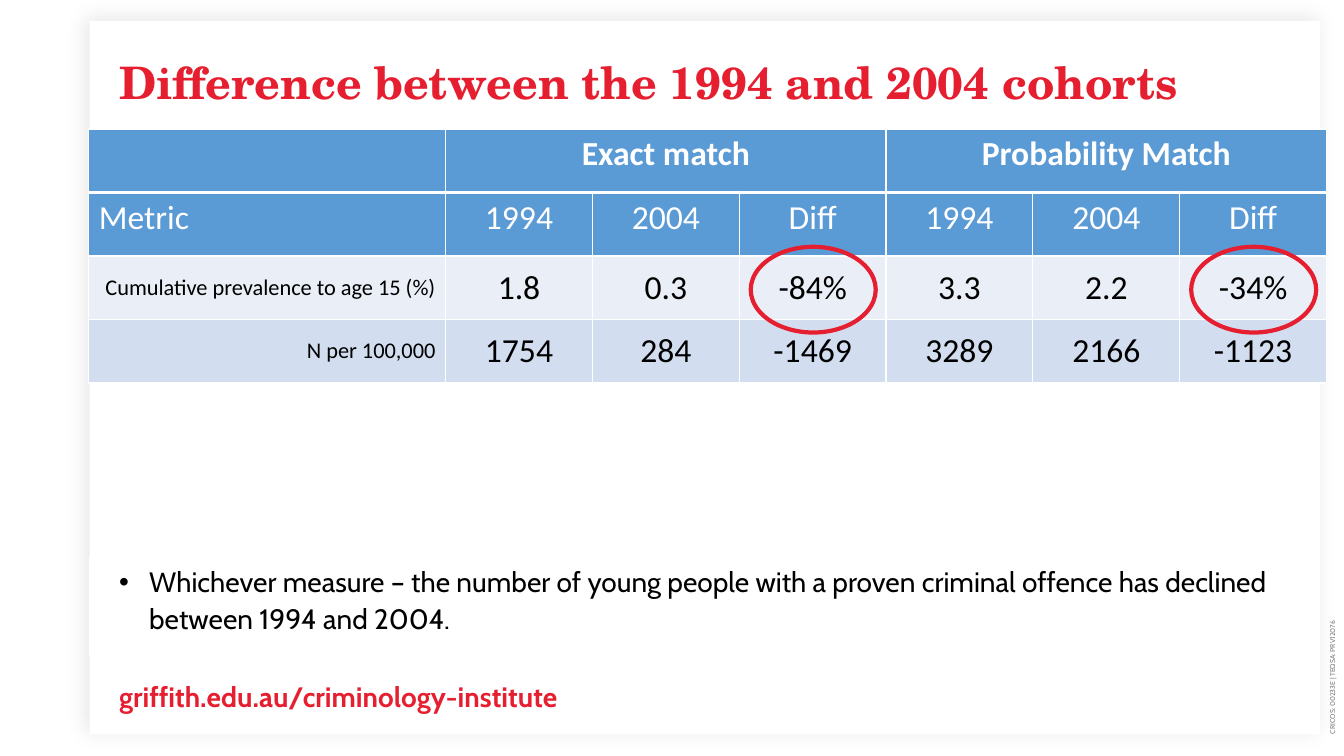
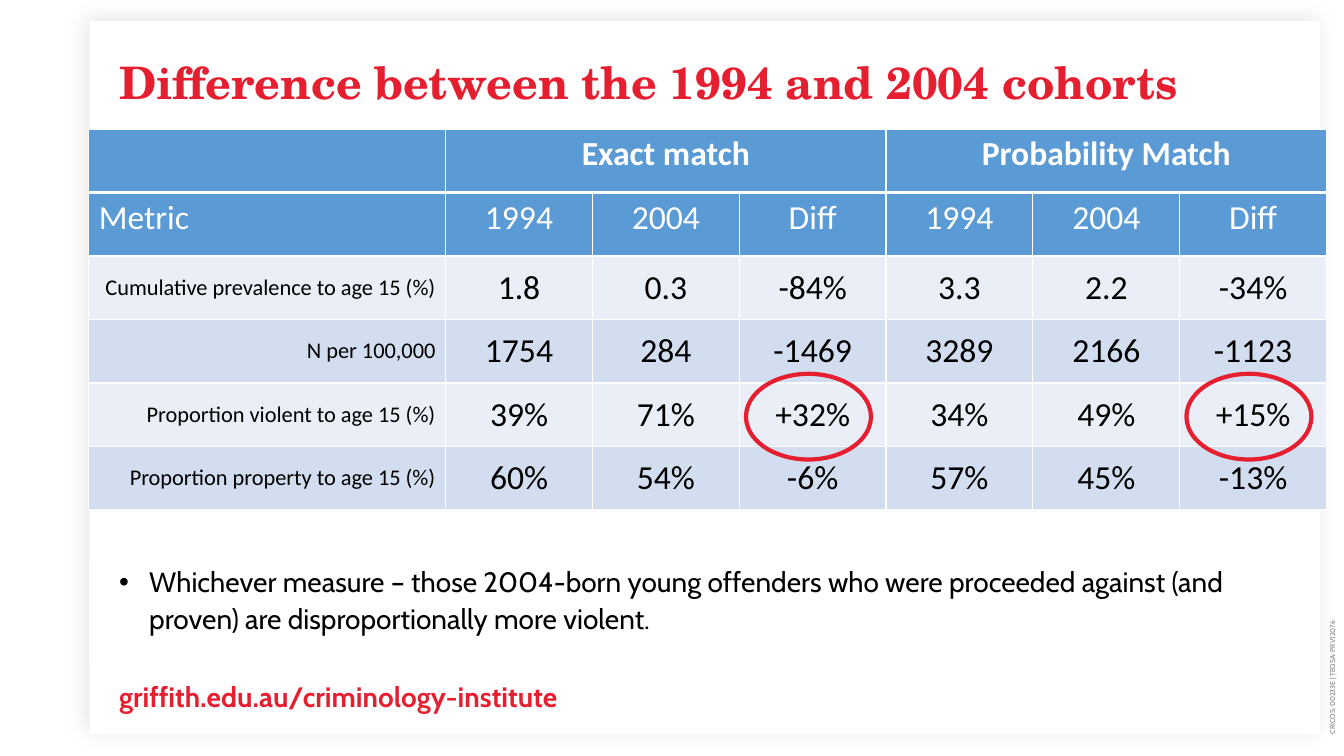
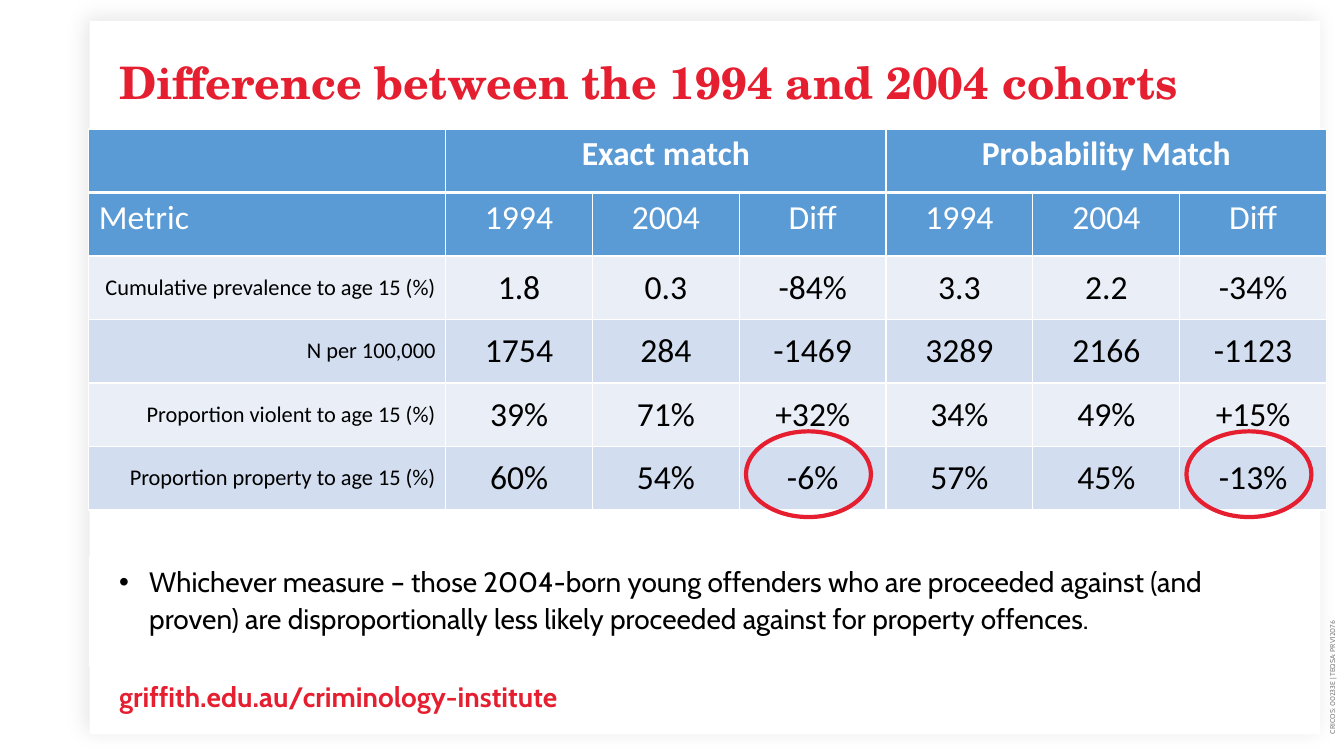
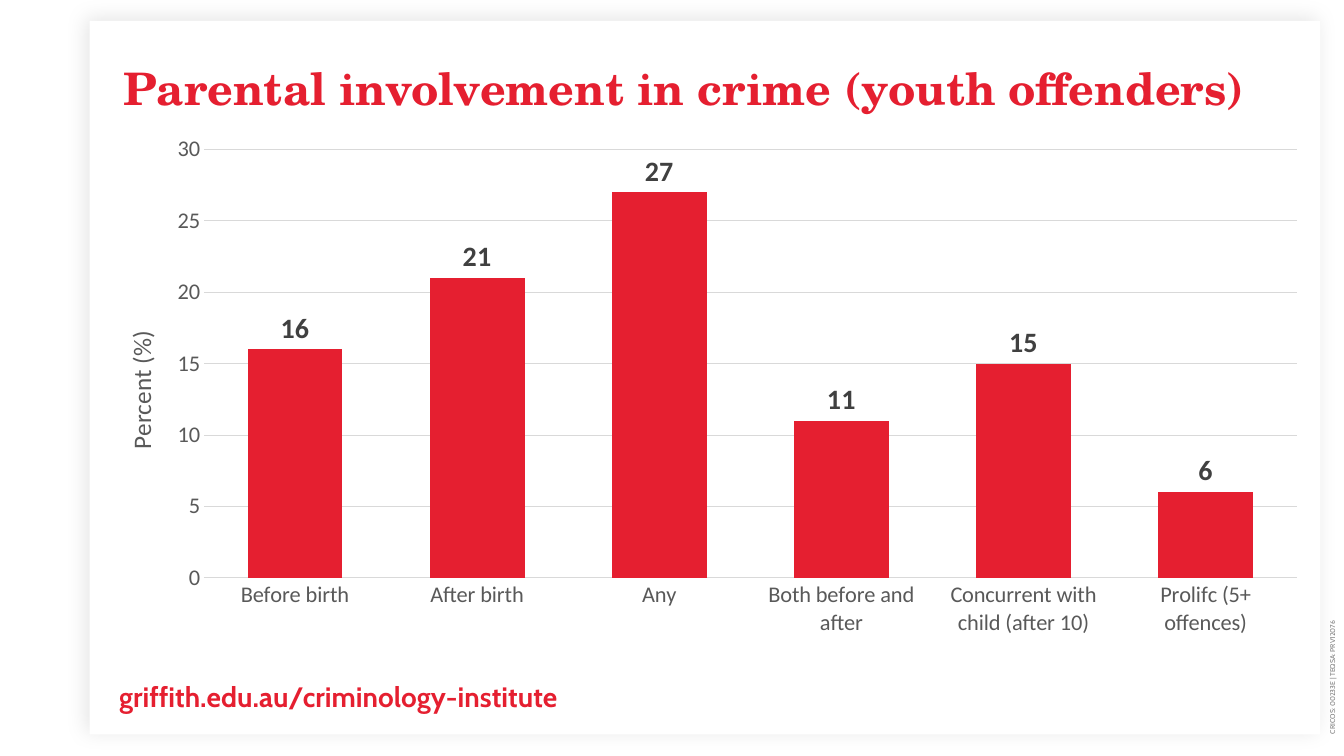
from dataclasses import dataclass

from lxml import etree
from pptx import Presentation
from pptx import util as u
from pptx.chart import data as chart_data
from pptx.dml.color import RGBColor
from pptx.enum import chart as ch
from pptx.enum import shapes, text
from pptx.oxml import ns

Cm, Pt = u.Cm, u.Pt
ALIGN, ANCHOR = text.PP_ALIGN, text.MSO_ANCHOR


@dataclass(frozen=True)
class Theme:
    # Colours
    red: str = "E51F30"
    blue: str = "5B9BD5"
    bands: tuple = ("EAEFF7", "D2DEEF")
    white: str = "FFFFFF"
    black: str = "000000"
    label: str = "404040"
    axis: str = "595959"
    grid: str = "D9D9D9"
    grey: str = "808080"
    # Fonts and sizes
    title_font: str = "TeX Gyre Schola"
    body_font: str = "Cabin"
    data_font: str = "Calibri"
    title: int = 32
    table: int = 24
    body: int = 20
    axis_title: int = 18
    small: int = 16
    tiny: int = 5


T = Theme()

# Shared grid, in centimetres
LEFT, WIDTH, TABLE_TOP = 2.24, 30.84, 3.25
METRIC_W, VALUE_W, ROW_H = 8.99, 3.7, 1.6
GROUP_W = 3 * VALUE_W


def rgb(color):
    return RGBColor.from_string(color)


def sub(parent, tag, **attrs):
    return etree.SubElement(parent, ns.qn(tag), attrs)


def style(font, size, color, name, bold=False):
    font.size, font.name, font.bold = Pt(size), name, bold
    font.color.rgb = rgb(color)


def frame(tf, margins, anchor=ANCHOR.TOP):
    tf.word_wrap, tf.auto_size = True, text.MSO_AUTO_SIZE.NONE
    tf.vertical_anchor = anchor
    tf.margin_left, tf.margin_top, tf.margin_right, tf.margin_bottom = map(Cm, margins)


def write(tf, words, size=T.body, color=T.black, font=T.body_font, bold=False,
          align=ALIGN.LEFT, spacing=None, after=None, bullet=False):
    p = tf.paragraphs[0]
    if bullet:
        pPr = p._p.get_or_add_pPr()
        pPr.set("marL", str(Cm(0.76)))
        pPr.set("indent", str(-Cm(0.76)))
        sub(pPr, "a:buFont", typeface="Arial")
        sub(pPr, "a:buChar", char="•")
    p.alignment = align
    if spacing:
        p.line_spacing = spacing
    if after:
        p.space_after = Pt(after)
    r = p.add_run()
    r.text = words
    style(r.font, size, color, font, bold)


def place_chart_part(parent, index, **layout):
    """Give a chart part a manual layout as fractions of the chart."""
    for old in parent.findall(ns.qn("c:layout")):
        parent.remove(old)
    box = etree.Element(ns.qn("c:layout"))
    manual = sub(box, "c:manualLayout")
    for key, value in layout.items():
        sub(manual, "c:" + key, val=str(value))
    parent.insert(index, box)


class Deck:
    def __init__(self):
        self.prs = Presentation()
        self.prs.slide_width, self.prs.slide_height = Cm(33.87), Cm(19.05)
        self.layout = self.prs.slide_layouts[5]
        self.s = None

    def slide(self, title, left=LEFT, top=1.5):
        first = self.s is None
        self.s = self.prs.slides.add_slide(self.layout)
        if first:
            self.card()
        sp = self.s.shapes.title
        sp.left, sp.top, sp.width, sp.height = map(Cm, (left, top, WIDTH, 1.75))
        frame(sp.text_frame, (0.76, 0.13, 0.51, 0.13))
        write(sp.text_frame, title, T.title, T.red, T.title_font, True, spacing=0.8)
        self.footer()

    def shape(self, kind, left, top, width, height, fill=None, line=None):
        sp = self.s.shapes.add_shape(kind, *map(Cm, (left, top, width, height)))
        sp.shadow.inherit = False
        if fill:
            sp.fill.solid()
            sp.fill.fore_color.rgb = rgb(fill)
        else:
            sp.fill.background()
        if line:
            sp.line.color.rgb, sp.line.width = rgb(line), Pt(3)
        else:
            sp.line.fill.background()
        return sp

    def card(self):
        """White card with a soft shadow, kept on the layout for every slide."""
        sp = self.shape(shapes.MSO_SHAPE.RECTANGLE, 2.26, 0.53, 31.01, 17.98, T.white)
        effects = sp._element.spPr.find(ns.qn("a:effectLst"))
        shadow = sub(effects, "a:outerShdw", blurRad=str(Pt(15)), dist=str(Pt(3)),
                     dir=str(225 * 60000), algn="br", rotWithShape="0")
        sub(sub(shadow, "a:srgbClr", val=T.black), "a:alpha", val="10000")
        self.layout.shapes._spTree.insert(2, sp._element)

    def textbox(self, left, top, width, height, margins, anchor=ANCHOR.TOP):
        sp = self.s.shapes.add_textbox(*map(Cm, (left, top, width, height)))
        frame(sp.text_frame, margins, anchor)
        return sp

    def footer(self):
        sp = self.textbox(LEFT, 16.54, WIDTH, 1.98, (0.76, 0.51, 0.51, 0.51))
        write(sp.text_frame, "griffith.edu.au/criminology-institute", color=T.red,
              bold=True, spacing=1.1, after=10)
        sp = self.textbox(24.61, 9.25, 17.93, 0.56, (0, 0, 0, 0), ANCHOR.MIDDLE)
        sp.rotation = 270
        write(sp.text_frame, "CRICOS: 00233E | TEQSA: PRV12076", T.tiny, T.grey)

    def note(self, words, height):
        sp = self.shape(shapes.MSO_SHAPE.RECTANGLE, LEFT, 14.02, WIDTH, height, T.white)
        frame(sp.text_frame, (0.76, 0.13, 0.51, 0.51))
        write(sp.text_frame, words, spacing=1.1, after=10, bullet=True)

    def rings(self, left, top):
        """Circle the same row in both Diff columns."""
        for x in (left, left + GROUP_W):
            self.shape(shapes.MSO_SHAPE.OVAL, x, top, 3.15, 2.16, line=T.red)

    def cell(self, cell, row, fill):
        tcPr = cell._tc.get_or_add_tcPr()
        for side in "LRTB":
            heavy = (row, side) in ((0, "B"), (1, "T"))
            ln = sub(tcPr, "a:ln" + side, w=str(Pt(3 if heavy else 1)))
            sub(sub(ln, "a:solidFill"), "a:srgbClr", val=T.white)
        cell.fill.solid()
        cell.fill.fore_color.rgb = rgb(fill)

    def table(self, rows):
        widths = [METRIC_W] + [VALUE_W] * 6
        table = self.s.shapes.add_table(
            len(rows), len(widths), Cm(LEFT), Cm(TABLE_TOP),
            Cm(sum(widths)), Cm(ROW_H * len(rows))).table
        for column, width in zip(table.columns, widths):
            column.width = Cm(width)
        for i, row in enumerate(rows):
            table.rows[i].height = Cm(ROW_H)
            header = i < 2
            for j, words in enumerate(row):
                cell = table.cell(i, j)
                self.cell(cell, i, T.blue if header else T.bands[i % 2])
                cell.vertical_anchor = ANCHOR.TOP if header else ANCHOR.MIDDLE
                if not words:
                    continue
                metric = j == 0
                align = ALIGN.CENTER
                if metric:
                    align = ALIGN.LEFT if header else ALIGN.RIGHT
                write(cell.text_frame, words,
                      T.small if metric and not header else T.table,
                      T.white if header else T.black, T.data_font, i == 0, align)
        for j in (1, 4):
            table.cell(0, j).merge(table.cell(0, j + 2))

    def column_chart(self, values, axis_title):
        data = chart_data.CategoryChartData()
        data.categories = list(values)
        data.add_series("Series 1", list(values.values()))
        chart = self.s.shapes.add_chart(
            ch.XL_CHART_TYPE.COLUMN_CLUSTERED, Cm(LEFT), Cm(TABLE_TOP),
            Cm(WIDTH), Cm(13.28), data).chart
        chart.has_legend = chart.has_title = False
        style(chart.font, 10, T.black, T.data_font)
        # Columns and labels
        plot = chart.plots[0]
        plot.vary_by_categories = False
        plot.gap_width, plot.overlap = 92, -27
        fill = plot.series[0].format.fill
        fill.solid()
        fill.fore_color.rgb = rgb(T.red)
        plot.has_data_labels = True
        labels = plot.data_labels
        labels.show_value = True
        labels.position = ch.XL_LABEL_POSITION.OUTSIDE_END
        style(labels.font, T.body, T.label, T.data_font, True)
        # Axes
        cat, val = chart.category_axis, chart.value_axis
        for axis in (cat, val):
            axis.major_tick_mark = axis.minor_tick_mark = ch.XL_TICK_MARK.NONE
            style(axis.tick_labels.font, T.small, T.axis, T.data_font)
        val.minimum_scale, val.maximum_scale, val.major_unit = 0, 30, 5
        val.format.line.fill.background()
        for line in (cat.format.line, val.major_gridlines.format.line):
            line.color.rgb, line.width = rgb(T.grid), Pt(0.75)
        tf = val.axis_title.text_frame
        write(tf, axis_title, T.axis_title, T.axis, T.data_font, align=ALIGN.CENTER)
        tf._txBody.bodyPr.set("rot", "-5400000")
        tf._txBody.bodyPr.set("vert", "horz")
        # Positions inside the chart
        place_chart_part(val.axis_title._element, 1,
                         xMode="edge", yMode="edge", x=0.025, y=0.375)
        place_chart_part(chart._chartSpace.chart.plotArea, 0, layoutTarget="inner",
                         xMode="edge", yMode="edge", x=0.094, y=0.039, w=0.893, h=0.813)


HEADER = [
    ["", "Exact match", "", "", "Probability Match", "", ""],
    ["Metric"] + ["1994", "2004", "Diff"] * 2,
]
PREVALENCE = [
    ["Cumulative prevalence to age 15 (%)", "1.8", "0.3", "-84%", "3.3", "2.2", "-34%"],
    ["N per 100,000", "1754", "284", "-1469", "3289", "2166", "-1123"],
]
PROPORTIONS = [
    ["Proportion violent to age 15 (%)", "39%", "71%", "+32%", "34%", "49%", "+15%"],
    ["Proportion property to age 15 (%)", "60%", "54%", "-6%", "57%", "45%", "-13%"],
]
ALL_ROWS = HEADER + PREVALENCE + PROPORTIONS

# Table rows, ring position, note and note height of each cohort slide
COHORT_SLIDES = [
    (HEADER + PREVALENCE, (18.92, 6.22),
     "Whichever measure – the number of young people with a proven criminal offence "
     "has declined between 1994 and 2004.", 2.51),
    (ALL_ROWS, (18.8, 9.42),
     "Whichever measure – those 2004-born young offenders who were proceeded against "
     "(and proven) are disproportionally more violent.", 2.79),
    (ALL_ROWS, (18.8, 10.87),
     "Whichever measure – those 2004-born young offenders who are proceeded against "
     "(and proven) are disproportionally less likely proceeded against for property "
     "offences.", 2.79),
]
INVOLVEMENT = {
    "Before birth": 16,
    "After birth": 21,
    "Any": 27,
    "Both before and after": 11,
    "Concurrent with child (after 10)": 15,
    "Prolifc (5+ offences)": 6,
}


def main():
    deck = Deck()
    # Cohort comparison
    for rows, ring, note, height in COHORT_SLIDES:
        deck.slide("Difference between the 1994 and 2004 cohorts")
        deck.table(rows)
        deck.rings(*ring)
        deck.note(note, height)
    # Parental involvement
    deck.slide("Parental involvement in crime (youth offenders)", 2.36, 1.65)
    deck.column_chart(INVOLVEMENT, "Percent (%)")
    deck.prs.save("out.pptx")


if __name__ == "__main__":
    main()
